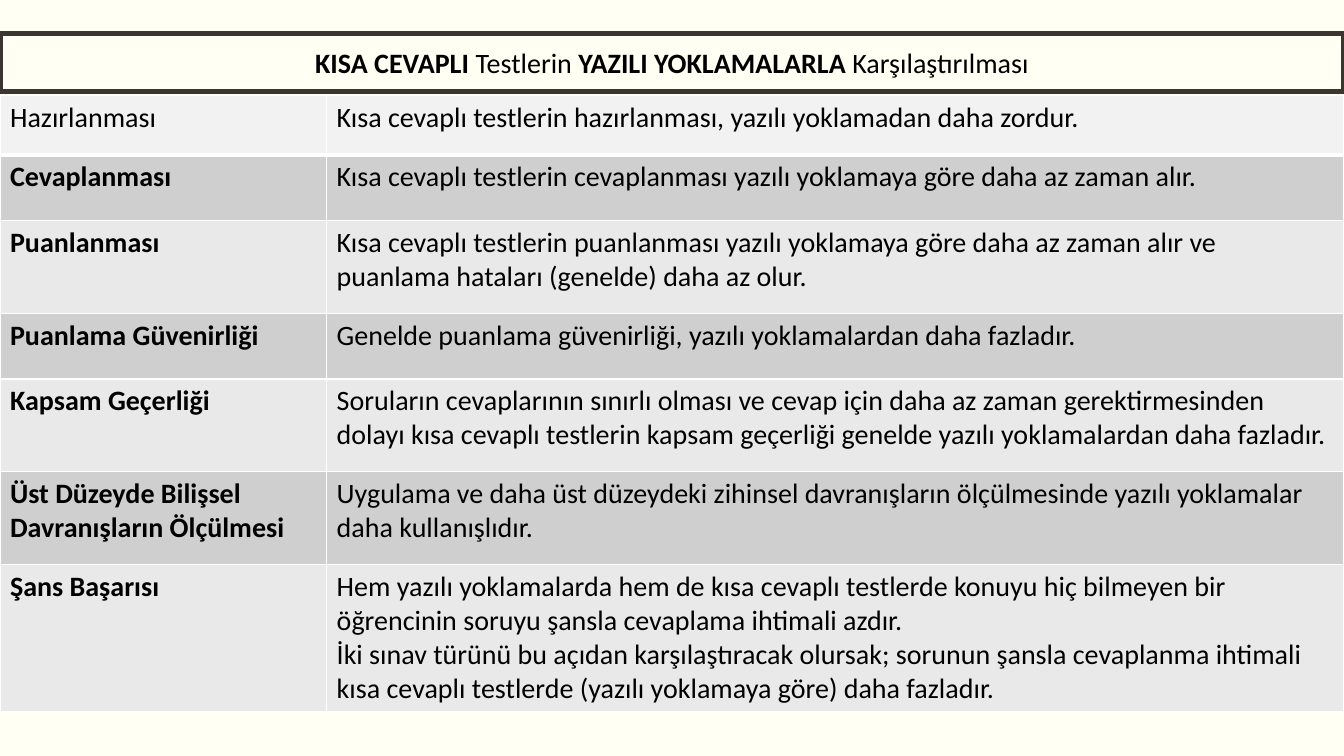
from dataclasses import dataclass
from typing import Any

from lxml.etree import SubElement as Sub
from pptx import Presentation
from pptx.dml.color import RGBColor as Rgb
from pptx.enum.shapes import MSO_SHAPE as Shape
from pptx.enum.text import MSO_ANCHOR as Anchor, PP_ALIGN as Align
from pptx.oxml.ns import qn
from pptx.util import Inches, Pt


@dataclass(frozen=True)
class Theme:
    """Colours and type sizes of the slide."""
    paper: str = "FFFFF3"
    frame: str = "3C3532"
    ink: str = "000000"
    rule: str = "FFFFFF"
    head: str = "F2F2F2"
    dark: str = "D0CFCF"
    light: str = "E9E9E9"
    font: str = "Calibri"
    size: float = 20
    edge: float = 3.78


@dataclass(frozen=True)
class Row:
    """One compared aspect with its explanation."""
    high: float
    label: str
    notes: tuple[str, ...]


@dataclass(frozen=True)
class Run:
    """A piece of the title."""
    text: str
    bold: bool = False


LOOK = Theme()
WIDE = 13.33
COLS = (3.24, 10.09)
TITLE = (
    Run("KISA CEVAPLI ", True),
    Run("Testlerin "),
    Run("YAZILI YOKLAMALARLA ", True),
    Run("Karşılaştırılması"),
)
ROWS = (
    Row(0.59, "Hazırlanması",
        ("Kısa cevaplı testlerin hazırlanması, yazılı yoklamadan daha zordur.",)),
    Row(0.65, "Cevaplanması",
        ("Kısa cevaplı testlerin cevaplanması yazılı yoklamaya göre daha az zaman alır.",)),
    Row(0.92, "Puanlanması",
        ("Kısa cevaplı testlerin puanlanması yazılı yoklamaya göre daha az zaman alır "
         "ve puanlama hataları (genelde) daha az olur.",)),
    Row(0.65, "Puanlama Güvenirliği",
        ("Genelde puanlama güvenirliği, yazılı yoklamalardan daha fazladır.",)),
    Row(0.92, "Kapsam Geçerliği",
        ("Soruların cevaplarının sınırlı olması ve cevap için daha az zaman "
         "gerektirmesinden dolayı kısa cevaplı testlerin kapsam geçerliği genelde "
         "yazılı yoklamalardan daha fazladır.",)),
    Row(0.92, "Üst Düzeyde Bilişsel Davranışların Ölçülmesi",
        ("Uygulama ve daha üst düzeydeki zihinsel davranışların ölçülmesinde "
         "yazılı yoklamalar daha kullanışlıdır.",)),
    Row(1.43, "Şans Başarısı",
        ("Hem yazılı yoklamalarda hem de kısa cevaplı testlerde konuyu hiç bilmeyen "
         "bir öğrencinin soruyu şansla cevaplama ihtimali azdır.",
         "İki sınav türünü bu açıdan karşılaştıracak olursak; sorunun şansla "
         "cevaplanma ihtimali kısa cevaplı testlerde (yazılı yoklamaya göre) daha "
         "fazladır.")),
)


def paint(fill: Any, tone: str) -> None:
    """Give a fill one solid colour."""
    fill.solid()
    fill.fore_color.rgb = Rgb.from_string(tone)


def write(para: Any, run: Run) -> None:
    """Add a styled run to a paragraph."""
    part = para.add_run()
    part.text = run.text
    form = {"name": LOOK.font, "size": Pt(LOOK.size), "bold": run.bold}
    for key, value in form.items():
        setattr(part.font, key, value)
    part.font.color.rgb = Rgb.from_string(LOOK.ink)


def border(cell: Any, base: float) -> None:
    """Rule all four sides of a cell."""
    props = cell._tc.get_or_add_tcPr()
    for side, width in {"L": 1, "R": 1, "T": 1, "B": base}.items():
        line = Sub(props, qn(f"a:ln{side}"), w=str(Pt(width)))
        fill = Sub(line, qn("a:solidFill"))
        Sub(fill, qn("a:srgbClr"), val=LOOK.rule)


def fill_cell(cell: Any, texts: tuple[str, ...], tone: str, bold: bool, base: float) -> None:
    """Set the borders, colour and text of a cell."""
    border(cell, base)
    paint(cell.fill, tone)
    frame = cell.text_frame
    for num, text in enumerate(texts):
        para = frame.add_paragraph() if num else frame.paragraphs[0]
        write(para, Run(text, bold))


def draw_grid(slide: Any) -> None:
    """Draw the comparison table."""
    high = sum(row.high for row in ROWS)
    grid = slide.shapes.add_table(
        len(ROWS), len(COLS), 0, Inches(0.95), Inches(WIDE), Inches(high)).table
    for key, value in {"first_row": False, "horz_banding": False}.items():
        setattr(grid, key, value)
    for col, width in zip(grid.columns, COLS):
        col.width = Inches(width)
    for num, row in enumerate(ROWS):
        grid.rows[num].height = Inches(row.high)
        tone = (LOOK.dark if num % 2 else LOOK.light) if num else LOOK.head
        base = 1 if num else 3
        fill_cell(grid.cell(num, 0), (row.label,), tone, num > 0, base)
        fill_cell(grid.cell(num, 1), row.notes, tone, False, base)


def draw_title(slide: Any) -> None:
    """Draw the framed title bar."""
    bar = slide.shapes.add_shape(
        Shape.RECTANGLE, 0, Inches(0.33), Inches(WIDE), Inches(0.58))
    bar.shadow.inherit = False
    paint(bar.fill, LOOK.paper)
    paint(bar.line.fill, LOOK.frame)
    bar.line.width = Pt(LOOK.edge)
    frame = bar.text_frame
    for key, value in {"word_wrap": True, "vertical_anchor": Anchor.MIDDLE}.items():
        setattr(frame, key, value)
    para = frame.paragraphs[0]
    para.alignment = Align.CENTER
    for run in TITLE:
        write(para, run)


def main() -> None:
    """Build and save the slide."""
    deck = Presentation()
    deck.slide_width, deck.slide_height = Inches(WIDE), Inches(7.5)
    slide = deck.slides.add_slide(deck.slide_layouts[6])
    paint(slide.background.fill, LOOK.paper)
    draw_grid(slide)
    draw_title(slide)
    deck.save("out.pptx")


if __name__ == "__main__":
    main()
